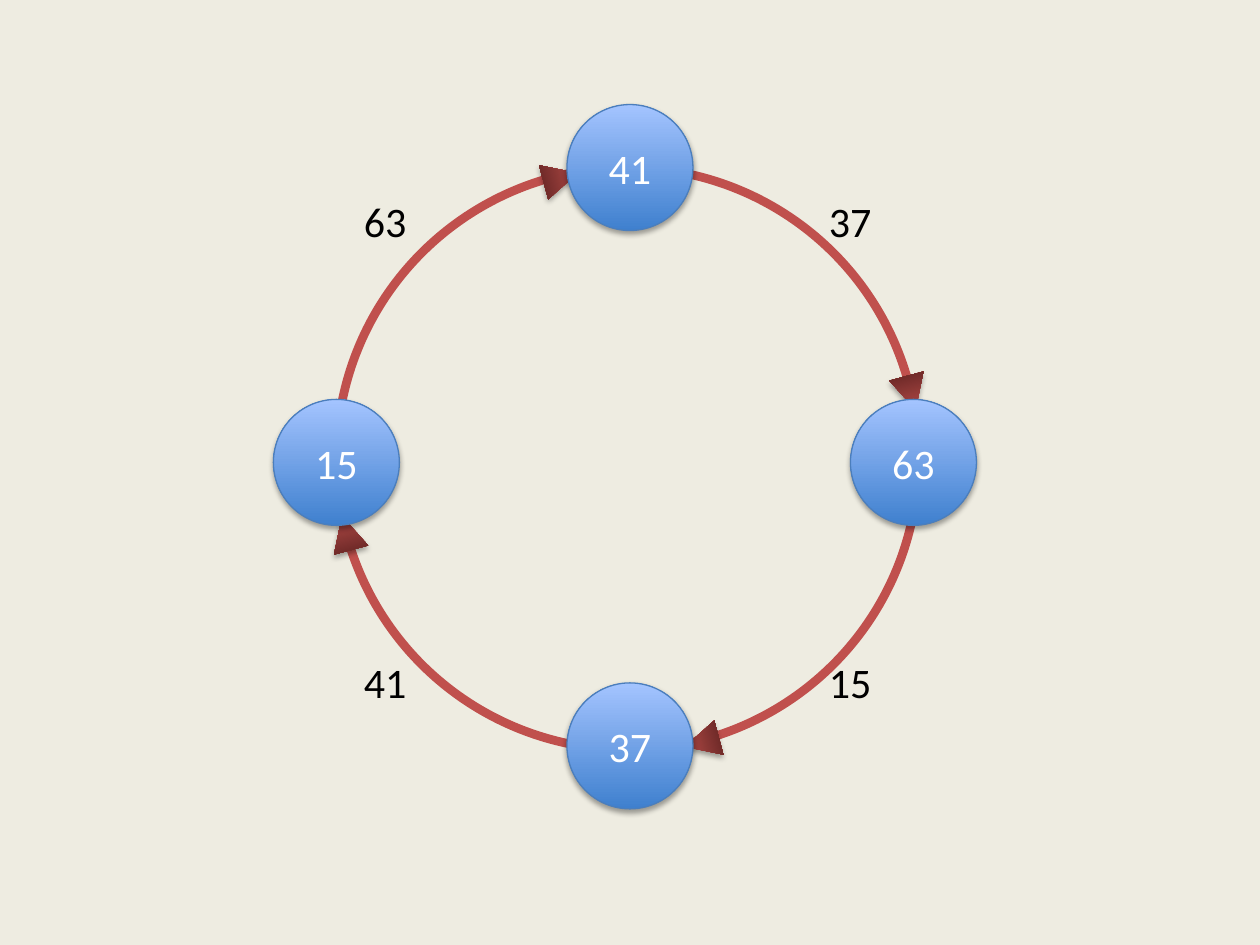
from lxml.etree import SubElement
from pptx import Presentation
from pptx.dml.color import RGBColor
from pptx.enum.shapes import MSO_SHAPE as SHAPE
from pptx.enum.text import MSO_ANCHOR as ANCHOR, MSO_AUTO_SIZE as AUTO_SIZE, PP_ALIGN as ALIGN
from pptx.oxml.ns import qn
from pptx.util import Inches, Pt


def color(value):
    return RGBColor.from_string(value)


def style_solid(shape, start, end, angle):
    shape.fill.gradient()
    shape.fill.gradient_angle = angle
    for stop, value in zip(shape.fill.gradient_stops, (start, end)):
        stop.color.rgb = color(value)
    shape.shadow.inherit = False
    effects = shape._element.spPr.find(qn("a:effectLst"))
    shadow = SubElement(effects, qn("a:outerShdw"), blurRad=str(Pt(3.1)), dist=str(Pt(1.8)),
                        dir="5400000", rotWithShape="0")
    black = SubElement(shadow, qn("a:srgbClr"), val="000000")
    SubElement(black, qn("a:alpha"), val="35000")


presentation = Presentation()
presentation.slide_width = Inches(10)
presentation.slide_height = Inches(7.5)
slide = presentation.slides.add_slide(presentation.slide_layouts[6])
slide.background.fill.solid()
slide.background.fill.fore_color.rgb = color("EEECE1")
shapes = slide.shapes

ring = shapes.add_shape(SHAPE.OVAL, Inches(2.67), Inches(1.33), Inches(4.62), Inches(4.62))
ring.shadow.inherit = False
ring.fill.background()
ring.line.color.rgb = color("C0504D")
ring.line.width = Pt(5)

labels = [("63", 2.79, 1.5), ("37", 6.48, 1.5), ("41", 2.79, 5.16), ("15", 6.48, 5.16)]
for text, left, top in labels:
    label = shapes.add_textbox(Inches(left), Inches(top), Inches(0.54), Inches(0.5))
    text_frame = label.text_frame
    text_frame.text = text
    text_frame.word_wrap = False
    text_frame.auto_size = AUTO_SIZE.SHAPE_TO_FIT_TEXT
    font = text_frame.paragraphs[0].runs[0].font
    font.name = "Calibri"
    font.size = Pt(24)
    font.color.rgb = color("000000")

arrowheads = [(4.31, 1.27, 75), (2.61, 4.09, 345), (7.09, 2.98, 165), (5.43, 5.75, 255)]
for left, top, rotation in arrowheads:
    arrowhead = shapes.add_shape(SHAPE.ISOSCELES_TRIANGLE, Inches(left), Inches(top),
                                 Inches(0.28), Inches(0.28))
    arrowhead.rotation = rotation
    arrowhead.line.fill.background()
    style_solid(arrowhead, "C0504D", "632523", 270)

nodes = [("15", 2.17, 3.17), ("41", 4.5, 0.83), ("63", 6.75, 3.17), ("37", 4.5, 5.42)]
for text, left, top in nodes:
    node = shapes.add_shape(SHAPE.OVAL, Inches(left), Inches(top), Inches(1), Inches(1))
    node.line.color.rgb = color("4B7EBC")
    node.line.width = Pt(0.75)
    style_solid(node, "3F80CE", "A4C4FF", 90)
    text_frame = node.text_frame
    text_frame.text = text
    text_frame.vertical_anchor = ANCHOR.MIDDLE
    paragraph = text_frame.paragraphs[0]
    paragraph.alignment = ALIGN.CENTER
    font = paragraph.runs[0].font
    font.name = "Calibri"
    font.size = Pt(24)
    font.color.rgb = color("FFFFFF")

presentation.save("out.pptx")
